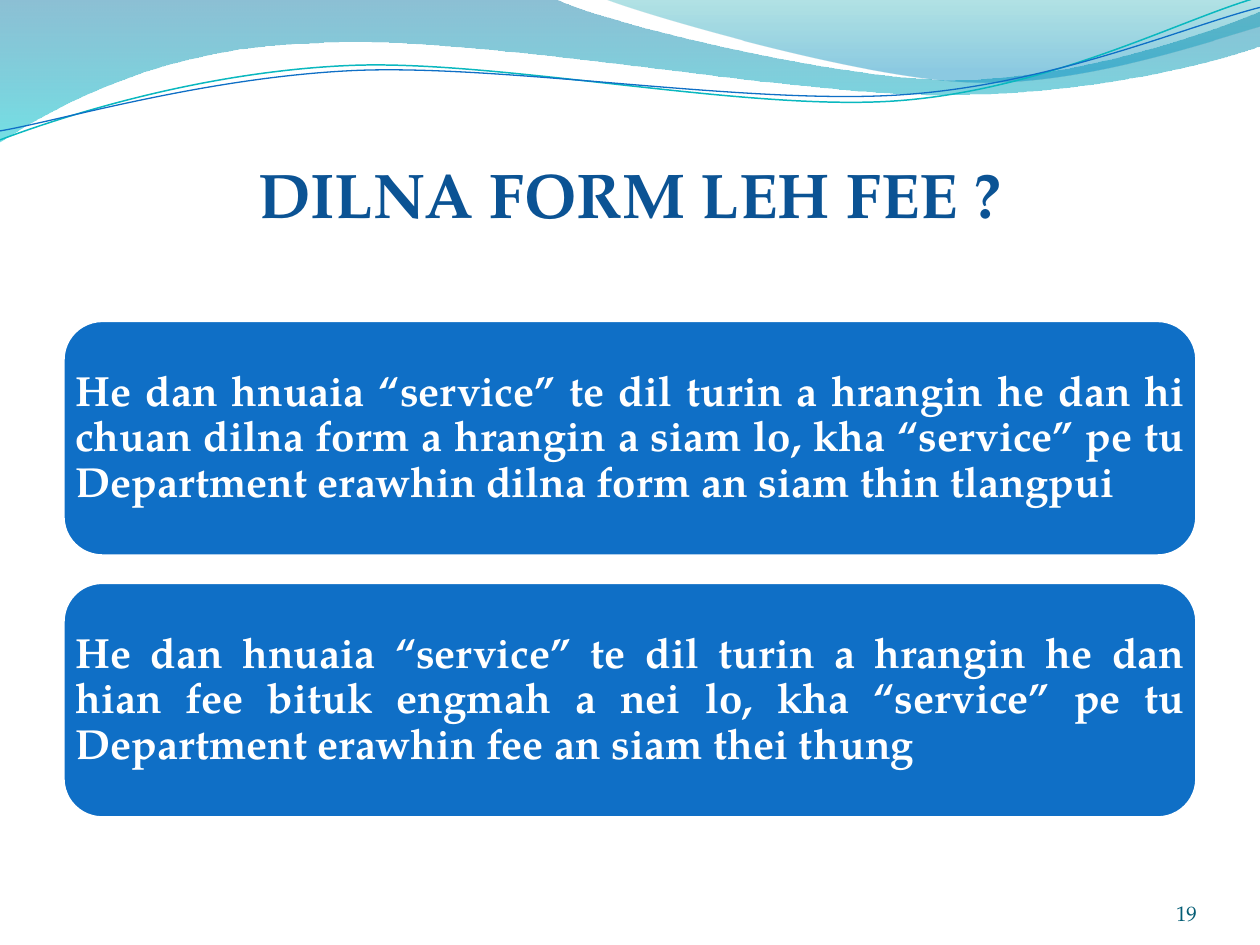
import math

from lxml import etree
from pptx import Presentation
from pptx import util as u
from pptx.dml.color import RGBColor
from pptx.enum import shapes, text
from pptx.oxml import ns

WHITE = RGBColor(0xFF, 0xFF, 0xFF)
BLUE = RGBColor(0x0F, 0x6F, 0xC6)
NAVY = RGBColor(0x0B, 0x53, 0x94)
TEAL = RGBColor(0x0A, 0xB8, 0xBF)
SLATE = RGBColor(0x04, 0x5D, 0x75)
DEEP = RGBColor(0x00, 0x74, 0xA1)
AQUA = RGBColor(0x00, 0xC6, 0xCF)
SEA = RGBColor(0x00, 0xA1, 0xA9)
SKY = RGBColor(0x00, 0x8B, 0xBF)
TILT = -2.7

BAND = [(0, 0), (11.18, -0.03),
        (12.09, 0.43, 16.87, 1.6, 19.25, 1.6), (21.67, 1.6, 24.33, 0.66, 25.4, 0.23),
        (25.43, 0.91), (24.97, 1.12, 22.1, 1.93, 18.95, 1.91),
        (15.8, 1.91, 9.7, 0.71, 6.53, 0.86), (3.28, 0.91, 1.17, 2.11, -0.03, 2.87)]
CREST = [(12.17, -0.03), (12.93, 0.28, 17.32, 1.57, 19.53, 1.65),
         (21.74, 1.75, 24.41, 0.81, 25.4, 0.53), (25.4, 0)]
UPPER = [(0, 2.82), (1.22, 2.36, 4.01, 1.45, 7.04, 1.32),
         (10.03, 1.19, 15.06, 2.26, 18.11, 2.03), (21.16, 1.8, 23.83, 0.38, 25.35, -0.05)]
LOWER = [(0, 2.64), (1.19, 2.44, 4.17, 1.55, 7.19, 1.42),
         (10.24, 1.3, 15.16, 2.13, 18.21, 1.91), (21.23, 1.7, 23.9, 0.53, 25.4, 0.15)]

NOTES = [
    "He dan hnuaia “service” te dil turin a hrangin he dan hi chuan dilna form "
    "a hrangin a siam lo, kha “service” pe tu Department erawhin dilna form an "
    "siam thin tlangpui",
    "He dan hnuaia “service” te dil turin a hrangin he dan hian fee bituk engmah "
    "a nei lo, kha “service” pe tu Department erawhin fee an siam thei thung",
]


def level(path, mid):
    """Turn a path about a centre so that the tilt brings it back."""
    angle = math.radians(-TILT)
    cos, sin = math.cos(angle), math.sin(angle)

    def turn(x, y):
        x, y = x - mid[0], y - mid[1]
        return mid[0] + x * cos - y * sin, mid[1] + x * sin + y * cos

    return [sum((turn(*p) for p in zip(part[::2], part[1::2])), ()) for part in path]


class Deck:
    """Holds the font and the current slide."""

    def __init__(self, slide, face):
        self.slide = slide
        self.face = face

    def curve(self, path, close):
        points = [(u.Cm(x), u.Cm(y)) for part in path
                  for x, y in zip(part[::2], part[1::2])]
        pen = self.slide.shapes.build_freeform(*points[0])
        pen.add_line_segments(points[1:], close=close)
        shape = pen.convert_to_shape()
        shape.shadow.inherit = False
        legs = shape.element.iter(ns.qn("a:lnTo"))
        legs = iter(list(legs))
        for part in path[1:]:
            leg = next(legs)
            if len(part) == 6:
                bend = etree.Element(ns.qn("a:cubicBezTo"))
                leg.addprevious(bend)
                for side in (leg, next(legs), next(legs)):
                    bend.append(side[0])
                    side.getparent().remove(side)
        return shape

    def wave(self, path, *stops):
        shape = self.curve(path, True)
        shape.line.fill.background()
        shape.fill.gradient()
        shape.fill.gradient_angle = 270
        for stop, (place, color, alpha) in zip(shape.fill.gradient_stops, stops):
            stop.position = place
            stop.color.rgb = color
        tints = shape.element.spPr.iter(ns.qn("a:srgbClr"))
        for tint, (place, color, alpha) in zip(tints, stops):
            etree.SubElement(tint, ns.qn("a:alpha"), val=str(alpha * 1000))

    def stroke(self, path, mid, color, width):
        shape = self.curve(level(path, mid), False)
        shape.rotation = TILT
        shape.fill.background()
        shape.line.color.rgb = color
        shape.line.width = u.Pt(width)

    def panel(self, *box):
        shape = self.slide.shapes.add_shape(
            shapes.MSO_SHAPE.ROUNDED_RECTANGLE, *map(u.Cm, box))
        shape.shadow.inherit = False
        shape.fill.solid()
        shape.fill.fore_color.rgb = BLUE
        shape.line.color.rgb = WHITE
        shape.line.width = u.Pt(2)

    def label(self, words, box, size, color, align, bold=True,
              anchor=text.MSO_ANCHOR.BOTTOM, pad=0, space=1.0):
        frame = self.slide.shapes.add_textbox(*map(u.Cm, box)).text_frame
        frame.word_wrap = True
        frame.vertical_anchor = anchor
        frame.margin_left = frame.margin_right = u.Cm(pad)
        frame.margin_top = frame.margin_bottom = u.Cm(pad)
        para = frame.paragraphs[0]
        para.text = words
        para.alignment = align
        para.line_spacing = space
        font = para.font
        font.name, font.size, font.bold = self.face, u.Pt(size), bold
        font.color.rgb = color


def main():
    show = Presentation()
    show.slide_width, show.slide_height = u.Cm(25.4), u.Cm(19.05)
    deck = Deck(show.slides.add_slide(show.slide_layouts[6]), "TeX Gyre Pagella")
    align = text.PP_ALIGN

    deck.wave(BAND, (0, DEEP, 45), (1, AQUA, 55))
    deck.wave(CREST, (0, SEA, 30), (0.8, SKY, 45))
    deck.stroke(UPPER, (12.67, 1.46), TEAL, 0.85)
    deck.stroke(LOWER, (12.69, 1.5), BLUE, 0.75)

    deck.label("DILNA FORM LEH FEE ?", (1.27, 1.96, 22.86, 2.69), 36, NAVY, align.CENTER)
    for i, note in enumerate(NOTES):
        box = (1.27, 6.46 + 5.28 * i, 22.86, 4.75)
        deck.panel(*box)
        deck.label(note, box, 24, WHITE, align.JUSTIFY,
                   anchor=text.MSO_ANCHOR.MIDDLE, pad=0.25, space=0.9)
    deck.label("19", (22.02, 17.65, 2.11, 1.02), 12, SLATE, align.RIGHT, bold=False)

    show.save("out.pptx")


if __name__ == "__main__":
    main()
